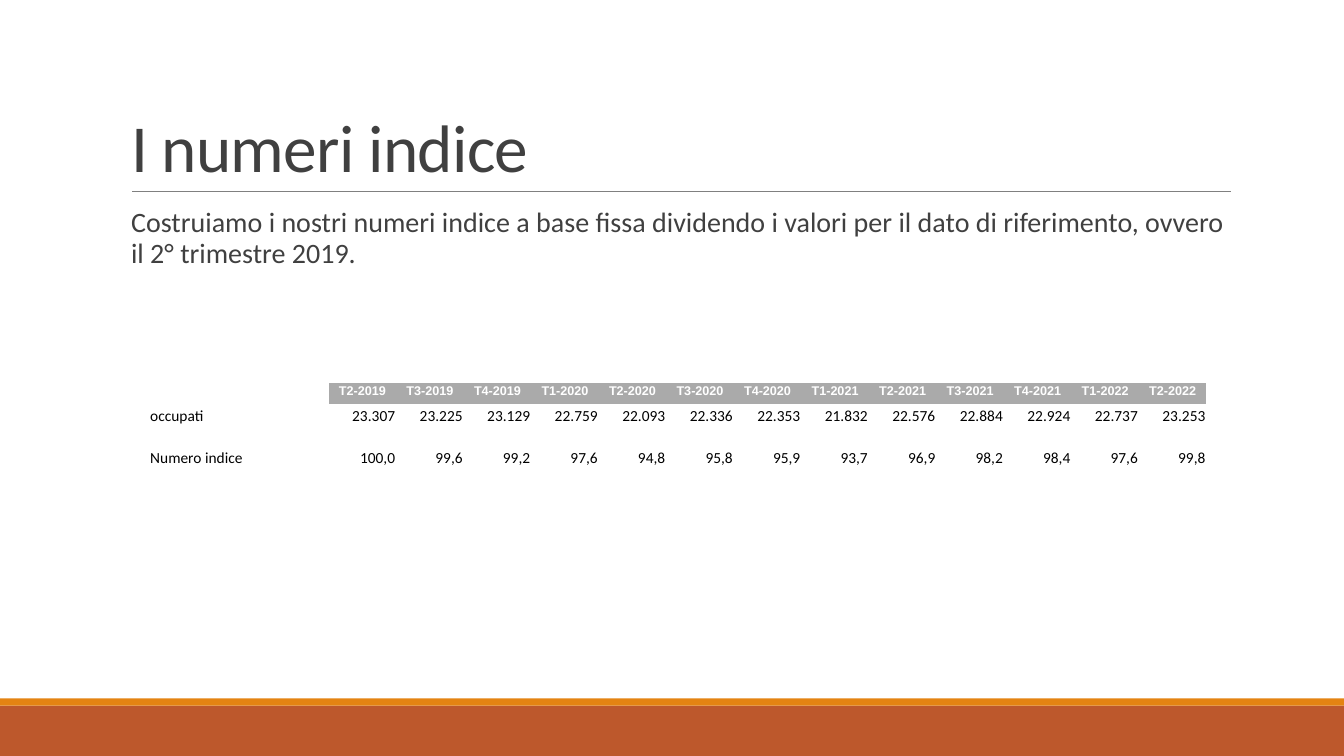
"""Build the slide on fixed-base index numbers of employment."""
import pptx
import pptx.dml.color
import pptx.enum.shapes
import pptx.enum.text
import pptx.oxml.ns
import pptx.util
from lxml import etree

Inches, Pt = pptx.util.Inches, pptx.util.Pt
ALIGN, ANCHOR = pptx.enum.text.PP_ALIGN, pptx.enum.text.MSO_ANCHOR
qn = pptx.oxml.ns.qn

TITLE = "I numeri indice"
BODY = ("Costruiamo i nostri numeri indice a base fissa dividendo i valori per "
        "il dato di riferimento, ovvero il 2° trimestre 2019.")
ROWS = [
    ["", "T2-2019", "T3-2019", "T4-2019", "T1-2020", "T2-2020", "T3-2020", "T4-2020",
     "T1-2021", "T2-2021", "T3-2021", "T4-2021", "T1-2022", "T2-2022"],
    ["occupati", "23.307", "23.225", "23.129", "22.759", "22.093", "22.336", "22.353",
     "21.832", "22.576", "22.884", "22.924", "22.737", "23.253"],
    [""] * 14,
    ["Numero indice", "100,0", "99,6", "99,2", "97,6", "94,8", "95,8", "95,9",
     "93,7", "96,9", "98,2", "98,4", "97,6", "99,8"],
]
THEME = {
    "footer": "BD582C", "accent": "E48312", "rule": "808080", "header": "AAAAAA",
    "title": {"name": "Calibri", "size": Pt(48), "color": "404040"},
    "body": {"name": "Calibri", "size": Pt(20), "color": "404040"},
    "head": {"name": "Arial", "size": Pt(9), "color": "FFFFFF", "bold": True},
    "cell": {"name": "Calibri", "size": Pt(11), "color": "000000", "bold": False},
}
NO_STYLE = "{2D5ABB26-0587-4C30-8999-92F81FD0307C}"
LABEL_W, QUARTER_W, ROW_H = 1.78, 0.67, 0.21


def rgb(value):
    """Return a colour object for a hex value."""
    return pptx.dml.color.RGBColor.from_string(value)


def assign(obj, **values):
    """Set several attributes of an object."""
    for name, value in values.items():
        setattr(obj, name, value)


def write(p, text, style):
    """Add a styled run to a paragraph and return it."""
    r = p.add_run()
    r.text = text
    for name, value in style.items():
        if name == "color":
            r.font.color.rgb = rgb(value)
        else:
            setattr(r.font, name, value)
    return r


def add_band(s, top, height, color):
    """Add a full-width coloured band."""
    sp = s.shapes.add_shape(pptx.enum.shapes.MSO_SHAPE.RECTANGLE, 0, Inches(top),
                            Inches(13.33), Inches(height))
    sp.shadow.inherit = False
    sp.fill.solid()
    sp.fill.fore_color.rgb = rgb(color)
    sp.line.fill.background()


def add_rule(s):
    """Add the thin line under the title."""
    line = s.shapes.add_connector(pptx.enum.shapes.MSO_CONNECTOR.STRAIGHT, Inches(1.31),
                                  Inches(1.9), Inches(12.21), Inches(1.9))
    line.line.color.rgb = rgb(THEME["rule"])
    line.line.width = Pt(0.5)
    etree.SubElement(line.element.spPr, qn("a:effectLst"))


def fill_title(sp):
    """Place and write the title."""
    assign(sp, left=Inches(1.2), top=Inches(0.31), width=Inches(11), height=Inches(1.59))
    assign(sp.text_frame, vertical_anchor=ANCHOR.BOTTOM, word_wrap=True)
    p = sp.text_frame.paragraphs[0]
    assign(p, alignment=ALIGN.LEFT, line_spacing=0.85)
    r = write(p, TITLE, THEME["title"])
    r.font._element.set("spc", "-50")


def fill_body(sp):
    """Place and write the body text."""
    assign(sp, left=Inches(1.2), top=Inches(2.02), width=Inches(11), height=Inches(4.4))
    assign(sp.text_frame, margin_left=0, margin_right=0, word_wrap=True)
    p = sp.text_frame.paragraphs[0]
    pPr = p._p.get_or_add_pPr()
    pPr.set("marL", str(Inches(0.1)))
    pPr.set("indent", "0")
    etree.SubElement(pPr, qn("a:buNone"))
    assign(p, line_spacing=0.9, space_before=Pt(0), space_after=Pt(2))
    write(p, BODY, THEME["body"])


def add_data(s):
    """Add the table of quarters, employment and index numbers."""
    count = len(ROWS[0])
    widths = [LABEL_W] + [QUARTER_W] * (count - 1)
    frame = s.shapes.add_table(len(ROWS), count, Inches(1.48), Inches(3.8),
                               Inches(sum(widths)), Inches(ROW_H * len(ROWS)))
    table = frame.table
    assign(table, first_row=False, horz_banding=False)
    table._tbl.tblPr.find(qn("a:tableStyleId")).text = NO_STYLE
    for column, width in zip(table.columns, widths):
        column.width = Inches(width)
    for i, row in enumerate(ROWS):
        table.rows[i].height = Inches(ROW_H)
        for j, text in enumerate(row):
            fill_cell(table.cell(i, j), text, i == 0, j == 0)


def fill_cell(cell, text, is_head, is_label):
    """Format and write one table cell."""
    assign(cell, margin_left=Inches(0.01), margin_right=Inches(0.01),
           margin_top=Inches(0.01), margin_bottom=0,
           vertical_anchor=ANCHOR.TOP if is_head else ANCHOR.BOTTOM)
    p = cell.text_frame.paragraphs[0]
    if is_head and text:
        cell.fill.solid()
        cell.fill.fore_color.rgb = rgb(THEME["header"])
    else:
        cell.fill.background()
    if text:
        p.alignment = ALIGN.CENTER if is_head else ALIGN.LEFT if is_label else ALIGN.RIGHT
        write(p, text, THEME["head" if is_head else "cell"])
    else:
        etree.SubElement(p._p, qn("a:endParaRPr"), sz="900")


def main():
    """Build and save the presentation."""
    prs = pptx.Presentation()
    assign(prs, slide_width=Inches(13.33), slide_height=Inches(7.5))
    s = prs.slides.add_slide(prs.slide_layouts[1])
    add_band(s, 7, 0.5, THEME["footer"])
    add_band(s, 6.93, 0.07, THEME["accent"])
    add_rule(s)
    fill_title(s.shapes.title)
    fill_body(s.placeholders[1])
    add_data(s)
    prs.save("out.pptx")


if __name__ == "__main__":
    main()
